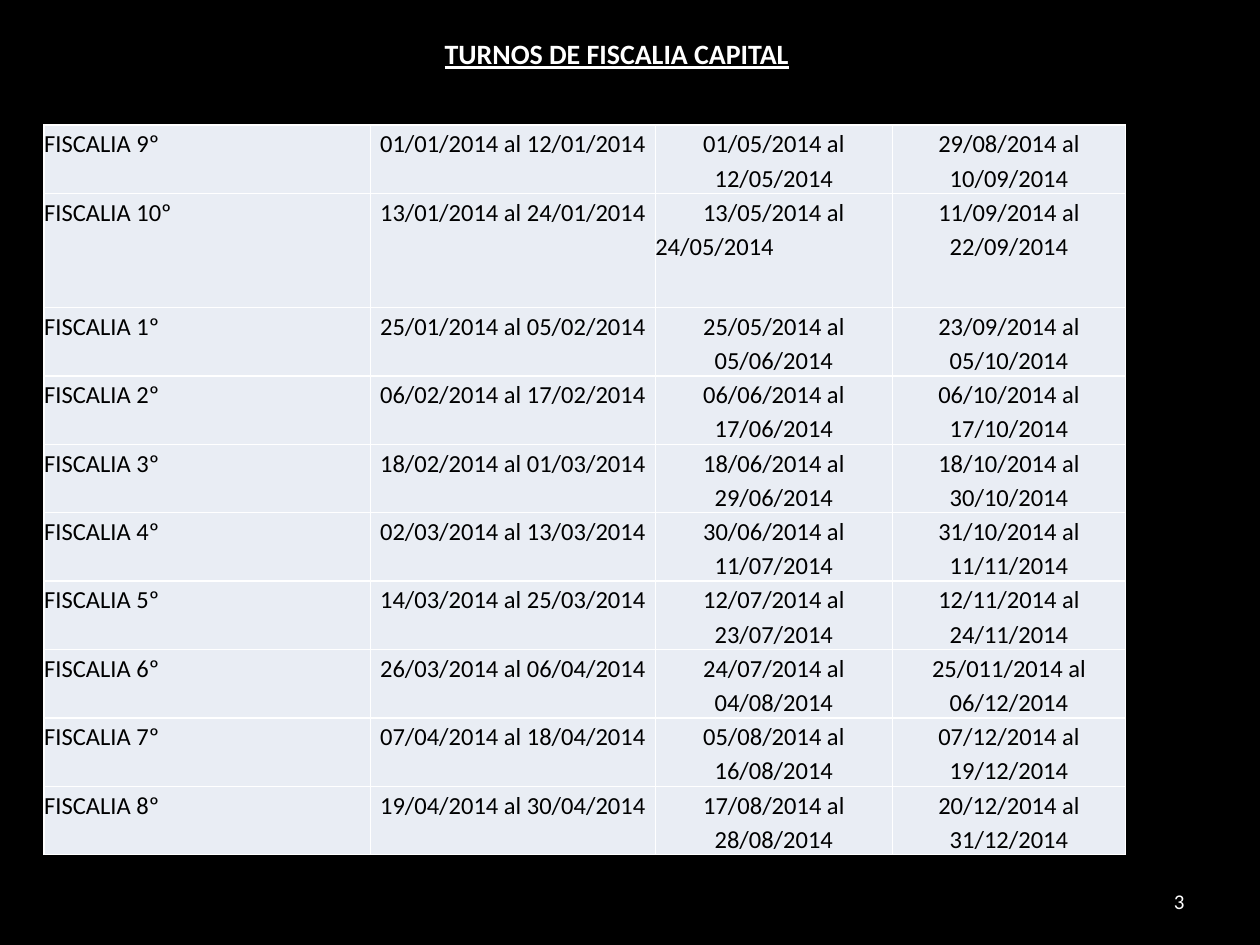
from dataclasses import dataclass

from lxml import etree
from pptx import Presentation
from pptx import util as u
from pptx.dml.color import RGBColor
from pptx.enum import text
from pptx.oxml import ns


@dataclass(frozen=True)
class Theme:
    font: str = "Calibri"
    background: str = "000000"
    light: str = "FFFFFF"
    dark: str = "000000"
    cell: str = "E9EDF4"
    title_size: int = 16
    cell_size: int = 14
    number_size: int = 12
    border_width: int = 1


@dataclass(frozen=True)
class Shift:
    office: str
    first: str
    second: str
    third: str
    height: float = 1.38
    split_second: bool = False


THEME = Theme()
LEFT, CENTER, RIGHT = text.PP_ALIGN.LEFT, text.PP_ALIGN.CENTER, text.PP_ALIGN.RIGHT
COLUMN_WIDTHS = (6.58, 5.74, 4.78, 4.70)
SHIFTS = (
    Shift("9º", "01/01/2014 al 12/01/2014", "01/05/2014 al 12/05/2014", "29/08/2014 al 10/09/2014"),
    Shift("10º", "13/01/2014 al 24/01/2014", "13/05/2014 al 24/05/2014", "11/09/2014 al 22/09/2014",
          height=2.3, split_second=True),
    Shift("1º", "25/01/2014 al 05/02/2014", "25/05/2014 al 05/06/2014", "23/09/2014 al 05/10/2014"),
    Shift("2º", "06/02/2014 al 17/02/2014", "06/06/2014 al 17/06/2014", "06/10/2014 al 17/10/2014"),
    Shift("3º", "18/02/2014 al 01/03/2014", "18/06/2014 al 29/06/2014", "18/10/2014 al 30/10/2014"),
    Shift("4º", "02/03/2014 al 13/03/2014", "30/06/2014 al 11/07/2014", "31/10/2014 al 11/11/2014"),
    Shift("5º", "14/03/2014 al 25/03/2014", "12/07/2014 al 23/07/2014", "12/11/2014 al 24/11/2014"),
    Shift("6º", "26/03/2014 al 06/04/2014", "24/07/2014 al 04/08/2014", "25/011/2014 al 06/12/2014"),
    Shift("7º", "07/04/2014 al 18/04/2014", "05/08/2014 al 16/08/2014", "07/12/2014 al 19/12/2014"),
    Shift("8º", "19/04/2014 al 30/04/2014", "17/08/2014 al 28/08/2014", "20/12/2014 al 31/12/2014"),
)


def style_paragraph(para, size: int, color: str, align) -> None:
    para.alignment = align
    para.font.name = THEME.font
    para.font.size = u.Pt(size)
    para.font.color.rgb = RGBColor.from_string(color)


def place(shape, left: float, top: float, width: float, height: float) -> None:
    shape.left, shape.top = u.Cm(left), u.Cm(top)
    shape.width, shape.height = u.Cm(width), u.Cm(height)


def add_borders(cell) -> None:
    properties = cell._tc.get_or_add_tcPr()
    for side in ("a:lnL", "a:lnR", "a:lnT", "a:lnB"):
        line = etree.SubElement(properties, ns.qn(side), w=str(u.Pt(THEME.border_width)))
        fill = etree.SubElement(line, ns.qn("a:solidFill"))
        etree.SubElement(fill, ns.qn("a:srgbClr"), val=THEME.light)


def fill_cell(cell, lines: list[tuple]) -> None:
    """Write (wording, alignment) pairs as the paragraphs of a cell."""
    add_borders(cell)
    cell.fill.solid()
    cell.fill.fore_color.rgb = RGBColor.from_string(THEME.cell)
    cell.margin_left = cell.margin_right = cell.margin_top = cell.margin_bottom = 0
    frame = cell.text_frame
    frame.text = "\n".join(wording for wording, _ in lines)
    for para, (_, align) in zip(frame.paragraphs, lines):
        style_paragraph(para, THEME.cell_size, THEME.dark, align)
        para.line_spacing = 1.15
        para.space_after = u.Pt(0)
    frame.paragraphs[-1].space_after = u.Pt(10)


def add_shift_table(page) -> None:
    frame = page.shapes.add_table(
        len(SHIFTS), len(COLUMN_WIDTHS), u.Cm(0.89), u.Cm(2.52),
        u.Cm(sum(COLUMN_WIDTHS)), u.Cm(sum(shift.height for shift in SHIFTS)))
    table = frame.table
    table.first_row = table.horz_banding = False
    for column, width in zip(table.columns, COLUMN_WIDTHS):
        column.width = u.Cm(width)
    for row, shift in zip(table.rows, SHIFTS):
        row.height = u.Cm(shift.height)
        second = [(shift.second, CENTER)]
        if shift.split_second:
            start, end = shift.second.rsplit(" ", 1)
            second = [(start, CENTER), (end, LEFT)]
        contents = ([(f"FISCALIA {shift.office}", LEFT)], [(shift.first, CENTER)],
                    second, [(shift.third, CENTER)])
        for cell, lines in zip(row.cells, contents):
            fill_cell(cell, lines)


def format_title(title) -> None:
    place(title, 8.71, 0.61, 7.54, 0.94)
    frame = title.text_frame
    frame.text = "TURNOS DE FISCALIA CAPITAL"
    frame.word_wrap = False
    frame.auto_size = text.MSO_AUTO_SIZE.SHAPE_TO_FIT_TEXT
    frame.vertical_anchor = text.MSO_ANCHOR.TOP
    para = frame.paragraphs[0]
    style_paragraph(para, THEME.title_size, THEME.light, LEFT)
    para.font.bold = para.font.underline = True


def add_page_number(page) -> None:
    box = page.shapes.add_textbox(u.Cm(18.2), u.Cm(17.66), u.Cm(5.93), u.Cm(1.01))
    frame = box.text_frame
    frame.text = "3"
    frame.word_wrap = True
    frame.vertical_anchor = text.MSO_ANCHOR.MIDDLE
    style_paragraph(frame.paragraphs[0], THEME.number_size, THEME.light, RIGHT)


def main() -> None:
    deck = Presentation()
    deck.slide_width, deck.slide_height = u.Cm(25.4), u.Cm(19.05)
    page = deck.slides.add_slide(deck.slide_layouts.get_by_name("Title Only"))
    page.background.fill.solid()
    page.background.fill.fore_color.rgb = RGBColor.from_string(THEME.background)
    format_title(page.shapes.title)
    add_shift_table(page)
    add_page_number(page)
    deck.save("out.pptx")


if __name__ == "__main__":
    main()
